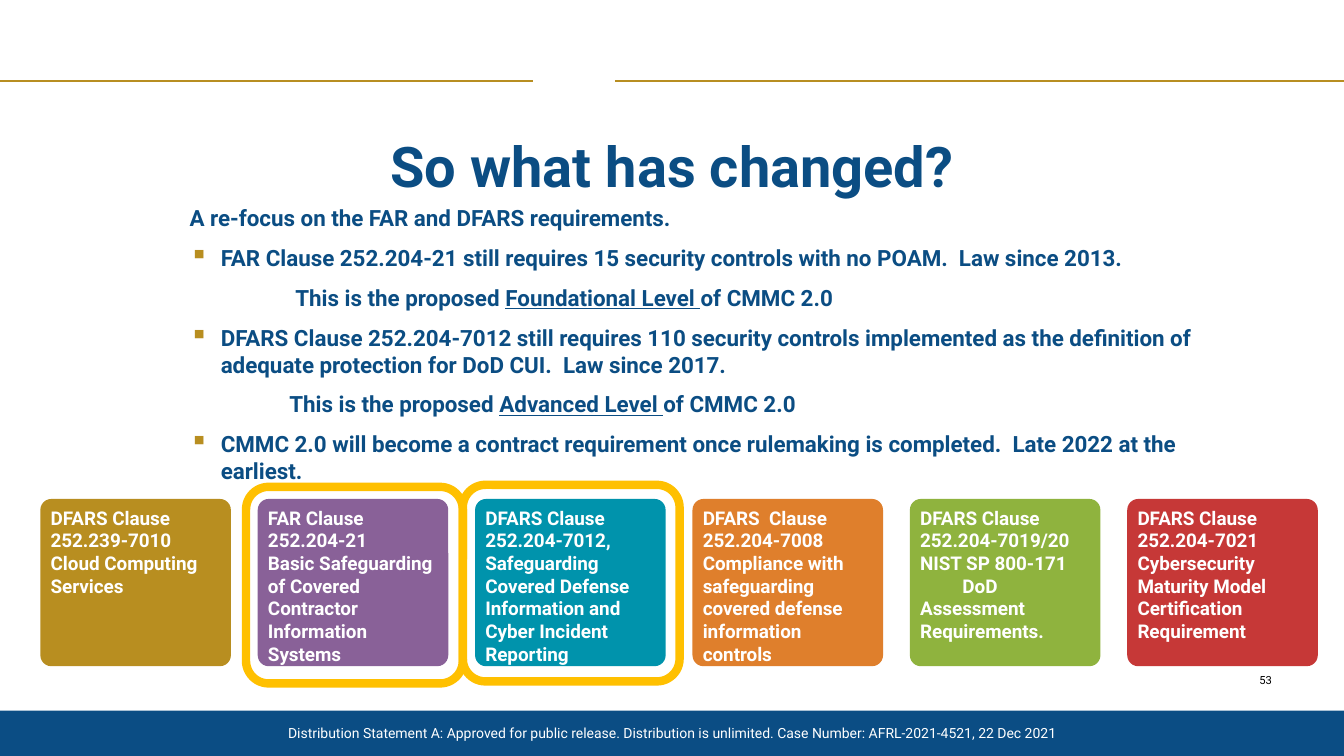
from lxml import etree
from pptx import Presentation
from pptx import util as u
from pptx.dml.color import RGBColor
from pptx.enum import shapes, text
from pptx.oxml.ns import qn

FONT = "Roboto"
HUES = {"navy": "0B4D83", "bar": "0B4D84", "rule": "B88E21", "gold": "B88E20",
        "violet": "896198", "teal": "0093AC", "orange": "DF7F2C",
        "green": "8FB33E", "red": "C63837", "ring": "FFC000",
        "white": "FFFFFF", "black": "000000"}

# Body lines: kind or first-line indent, runs as (words, underlined)
BODY = [
    ("plain", [("A re-focus on the FAR and DFARS requirements.", False)]),
    ("bullet", [("FAR Clause 252.204-21 still requires 15 security controls "
                 "with no POAM.  Law since 2013.", False)]),
    (1.05, [("This is the proposed ", False), ("Foundational Level ", True),
            ("of CMMC 2.0", False)]),
    ("bullet", [("DFARS Clause 252.204-7012 still requires 110 security controls "
                 "implemented as the definition of adequate protection for DoD CUI.  "
                 "Law since 2017.", False)]),
    (0.99, [("This is the proposed ", False), ("Advanced Level ", True),
            ("of CMMC 2.0", False)]),
    ("bullet", [("CMMC 2.0 will become a contract requirement once rulemaking is "
                 "completed.  Late 2022 at the earliest.", False)]),
]

# Clause cards, left to right
CARDS = [
    ("gold", ["DFARS Clause", "252.239-7010", "Cloud Computing Services"]),
    ("violet", ["FAR Clause", "252.204-21", "Basic Safeguarding", "of Covered",
                "Contractor", "Information Systems"]),
    ("teal", ["DFARS Clause", "252.204-7012, Safeguarding Covered Defense "
              "Information and Cyber Incident Reporting"]),
    ("orange", ["DFARS  Clause 252.204-7008 Compliance with safeguarding",
                "covered defense information controls"]),
    ("green", ["DFARS Clause 252.204-7019/20", "NIST SP 800-171",
               "DoD Assessment Requirements."]),
    ("red", ["DFARS Clause", "252.204-7021",
             "Cybersecurity Maturity Model Certification Requirement"]),
]


def color(name):
    return RGBColor.from_string(HUES[name])


def style(para, size, hue, bold=False, align=text.PP_ALIGN.LEFT):
    para.alignment = align
    for run in para.runs:
        run.font.name = FONT
        run.font.size = u.Pt(size)
        run.font.bold = bold
        run.font.color.rgb = color(hue)


def inset(frame, side=0, top=0):
    frame.word_wrap = True
    frame.margin_left = frame.margin_right = u.Inches(side)
    frame.margin_top = frame.margin_bottom = u.Inches(top)


def indent(para, left, first):
    props = para._p.get_or_add_pPr()
    props.set("marL", str(u.Inches(left)))
    props.set("indent", str(u.Inches(first)))
    return props


def bullet(para):
    props = indent(para, 0.31, -0.31)
    tint = etree.SubElement(props, qn("a:buClr"))
    etree.SubElement(tint, qn("a:srgbClr"), val=HUES["gold"])
    etree.SubElement(props, qn("a:buSzPct"), val="115000")
    etree.SubElement(props, qn("a:buChar"), char="▪")


def label(slide, words, place, size, hue, bold=False, align=text.PP_ALIGN.CENTER):
    frame = slide.shapes.add_textbox(*map(u.Inches, place)).text_frame
    inset(frame)
    frame.vertical_anchor = text.MSO_ANCHOR.MIDDLE
    frame.text = words
    style(frame.paragraphs[0], size, hue, bold, align)


def block(slide, place, fill=None, line=None, curve=None):
    kind = shapes.MSO_SHAPE.RECTANGLE if curve is None else shapes.MSO_SHAPE.ROUNDED_RECTANGLE
    shape = slide.shapes.add_shape(kind, *map(u.Inches, place))
    shape.shadow.inherit = False
    if curve is not None:
        shape.adjustments[0] = curve
    if fill:
        shape.fill.solid()
        shape.fill.fore_color.rgb = color(fill)
    else:
        shape.fill.background()
    if line:
        shape.line.color.rgb = color(line)
        shape.line.width = u.Pt(6)
    else:
        shape.line.fill.background()
    return shape


def rule(slide, start, end):
    line = slide.shapes.add_connector(
        shapes.MSO_CONNECTOR.STRAIGHT, *map(u.Inches, (start, 0.8, end, 0.8)))
    line.line.color.rgb = color("rule")
    line.line.width = u.Pt(1.25)
    etree.SubElement(line._element.spPr, qn("a:effectLst"))


def body(slide):
    frame = slide.shapes.add_textbox(*map(u.Inches, (1.88, 2.03, 10.18, 2.69))).text_frame
    inset(frame)
    for i, (kind, runs) in enumerate(BODY):
        para = frame.add_paragraph() if i else frame.paragraphs[0]
        if i:
            para.space_before = u.Pt(3.2)
        para.space_after = u.Pt(6)
        if kind == "bullet":
            bullet(para)
        elif kind != "plain":
            indent(para, 0, kind)
        for words, under in runs:
            run = para.add_run()
            run.text = words
            run.font.underline = under
        style(para, 16, "navy", True)


def card(slide, left, hue, lines):
    frame = block(slide, (left, 4.95, 1.89, 1.66), hue, curve=0.066).text_frame
    # The rounded corners add a little to these margins
    inset(frame, 0.07, 0.04)
    frame.margin_bottom = 0
    frame.vertical_anchor = text.MSO_ANCHOR.TOP
    frame.text = "\n".join(lines)
    for para in frame.paragraphs:
        if para.text.startswith("DoD"):
            indent(para, 0, 0.42)
        style(para, 13.5, "white", True)


def main():
    deck = Presentation()
    deck.slide_width, deck.slide_height = u.Inches(13.33), u.Inches(7.5)
    slide = deck.slides.add_slide(deck.slide_layouts[6])

    # Frame of the page
    foot = (0, 7.05, 13.33, 0.45)
    block(slide, foot, "bar")
    rule(slide, 0, 5.29)
    rule(slide, 6.1, 13.33)
    label(slide, "Distribution Statement A: Approved for public release. "
          "Distribution is unlimited. Case Number: AFRL-2021-4521, 22 Dec 2021",
          foot, 10, "white")
    label(slide, "53", (12.49, 6.63, 0.44, 0.24), 8, "black", align=text.PP_ALIGN.LEFT)

    # Title and body
    label(slide, "So what has changed?", (0, 1.24, 13.33, 0.79), 40, "navy", True)
    body(slide)

    # Clause cards, two of them ringed
    for i, (hue, lines) in enumerate(CARDS):
        card(slide, 0.4 + 2.156 * i, hue, lines)
    for left, top in ((4.59, 4.81), (2.44, 4.83)):
        block(slide, (left, top, 2.15, 1.95), line="ring", curve=0.115)

    deck.save("out.pptx")


if __name__ == "__main__":
    main()
